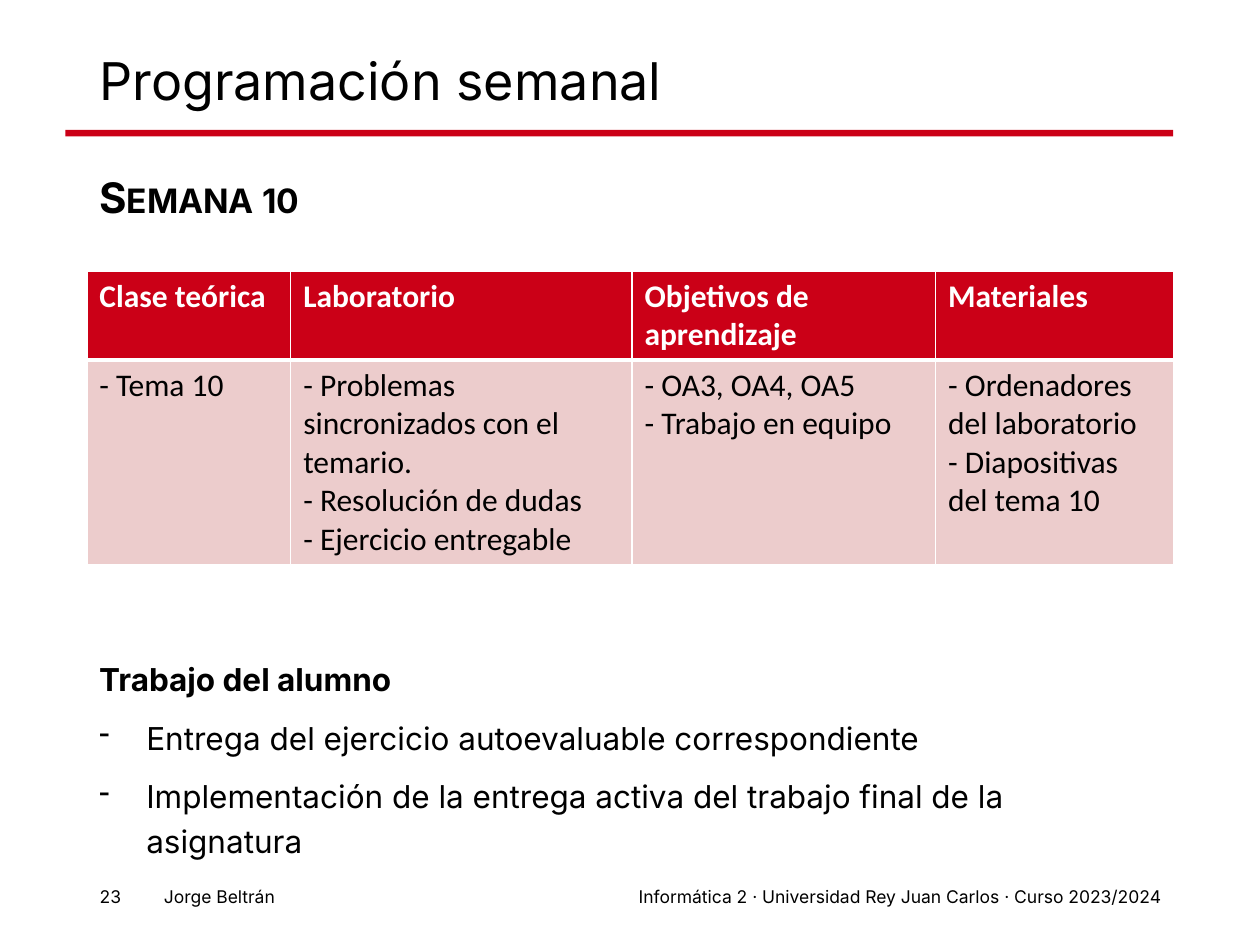
"""Build the weekly plan slide for week 10."""
import pptx
import pptx.dml.color
import pptx.enum.shapes
import pptx.enum.text
import pptx.oxml.ns
import pptx.util
import lxml.etree

Cm = pptx.util.Cm
Pt = pptx.util.Pt
ALIGN = pptx.enum.text.PP_ALIGN
RED = pptx.dml.color.RGBColor(0xCB, 0x00, 0x17)
PINK = pptx.dml.color.RGBColor(0xEC, 0xCC, 0xCC)
BLACK = pptx.dml.color.RGBColor(0, 0, 0)
WHITE = pptx.dml.color.RGBColor(255, 255, 255)
LEFT, WIDTH = 1.75, 21.9
COLS = [4.11, 6.88, 6.12, 4.8]
ROWS = [1.8, 4.13]
HEADS = ["Clase teórica", "Laboratorio", "Objetivos de aprendizaje", "Materiales"]
PLAN = [
    "- Tema 10",
    "- Problemas sincronizados con el temario.\n- Resolución de dudas\n- Ejercicio entregable",
    "- OA3, OA4, OA5\n- Trabajo en equipo",
    "- Ordenadores del laboratorio\n- Diapositivas del tema 10",
]
TASKS = [
    "Trabajo del alumno",
    "Entrega del ejercicio autoevaluable correspondiente",
    "Implementación de la entrega activa del trabajo final de la asignatura",
]
FOOT = [
    (6.43, 17.22, "Informática 2 · Universidad Rey Juan Carlos · Curso 2023/2024"),
    (1.47, 1.22, "23"),
    (0.53, 5.26, "Jorge Beltrán"),
]


def style(para, size, color=BLACK, bold=False, face="Inter"):
    for run in para.runs:
        font = run.font
        font.name, font.size, font.bold = face, Pt(size), bold
        font.color.rgb = color


def add_text(slide, left, top, width, height, text, size, bold=False):
    box = slide.shapes.add_textbox(Cm(left), Cm(top), Cm(width), Cm(height))
    frame = box.text_frame
    frame.word_wrap = True
    frame.text = text
    for para in frame.paragraphs:
        style(para, size, bold=bold)
    return frame


def space(para):
    para.line_spacing = 1.2
    para.space_before = Pt(7.5)


def add_dash(para):
    props = para._p.get_or_add_pPr()
    props.set("marL", str(Cm(0.95)))
    props.set("indent", str(-Cm(0.95)))
    mark = lxml.etree.SubElement(props, pptx.oxml.ns.qn("a:buChar"))
    mark.set("char", "-")


def add_edge(cell, side, width):
    qn = pptx.oxml.ns.qn
    line = lxml.etree.SubElement(cell._tc.get_or_add_tcPr(), qn("a:ln" + side))
    line.set("w", str(Pt(width)))
    fill = lxml.etree.SubElement(line, qn("a:solidFill"))
    lxml.etree.SubElement(fill, qn("a:srgbClr")).set("val", str(WHITE))


def fill_cell(cell, text, head):
    thick = "B" if head else "T"
    for side in "LRTB":
        add_edge(cell, side, 3 if side == thick else 1)
    cell.fill.solid()
    cell.fill.fore_color.rgb = RED if head else PINK
    cell.text_frame.text = text
    for para in cell.text_frame.paragraphs:
        style(para, 18, WHITE if head else BLACK, head, "Calibri")


def add_plan(slide):
    frame = slide.shapes.add_table(
        2, len(COLS), Cm(LEFT), Cm(5.46), Cm(WIDTH), Cm(sum(ROWS)))
    table = frame.table
    for col, width in zip(table.columns, COLS):
        col.width = Cm(width)
    for row, height in zip(table.rows, ROWS):
        row.height = Cm(height)
    for r, texts in enumerate((HEADS, PLAN)):
        for c, text in enumerate(texts):
            fill_cell(table.cell(r, c), text, r == 0)


def add_bar(slide):
    bar = slide.shapes.add_shape(
        pptx.enum.shapes.MSO_SHAPE.RECTANGLE, Cm(1.32), Cm(2.62), Cm(22.33), Cm(0.13))
    bar.shadow.inherit = False
    bar.fill.solid()
    bar.fill.fore_color.rgb = RED
    bar.line.fill.background()


def add_foot(slide):
    for left, width, text in FOOT:
        frame = add_text(slide, left, 17.73, width, 0.69, text, 10)
        frame.paragraphs[0].alignment = ALIGN.RIGHT


def add_title(slide):
    frame = add_text(slide, LEFT, 1.02, WIDTH, 1.32, "Programación semanal", 29.7)
    frame.vertical_anchor = pptx.enum.text.MSO_ANCHOR.MIDDLE
    frame.paragraphs[0].line_spacing = 0.9


def add_week(slide):
    frame = add_text(slide, LEFT, 3.12, WIDTH, 1.73, "Semana 10", 24, True)
    para = frame.paragraphs[0]
    space(para)
    para.runs[0]._r.get_or_add_rPr().set("cap", "small")


def add_tasks(slide):
    frame = add_text(slide, LEFT, 13.03, WIDTH, 4.32, "\n".join(TASKS), 18)
    for i, para in enumerate(frame.paragraphs):
        space(para)
        if i:
            add_dash(para)
        else:
            style(para, 18, bold=True)


def main():
    deck = pptx.Presentation()
    deck.slide_width, deck.slide_height = Cm(25.4), Cm(19.05)
    slide = deck.slides.add_slide(deck.slide_layouts[6])
    add_bar(slide)
    add_foot(slide)
    add_title(slide)
    add_plan(slide)
    add_week(slide)
    add_tasks(slide)
    deck.save("out.pptx")


if __name__ == "__main__":
    main()
